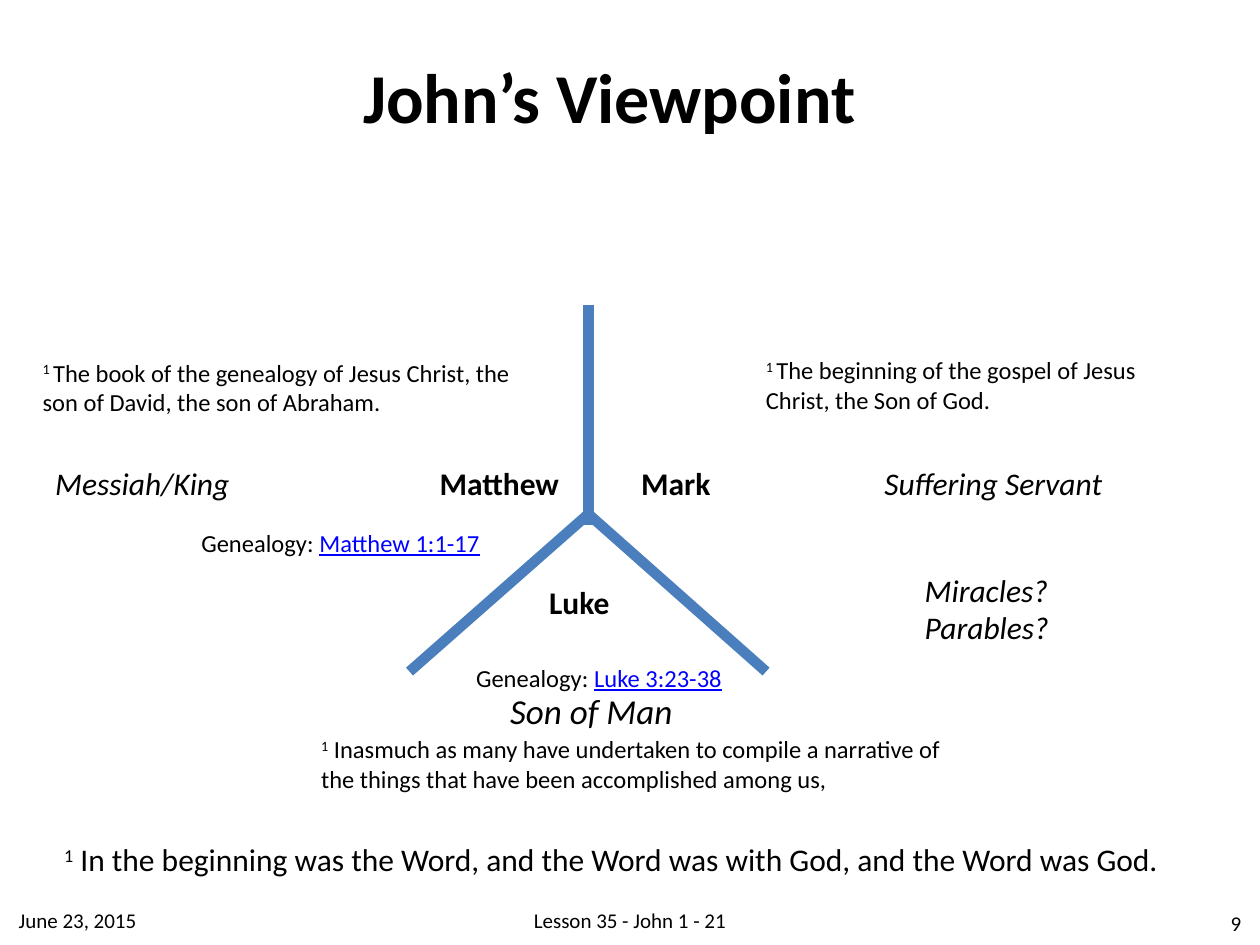
import pptx
import pptx.dml.color
import pptx.enum.shapes
import pptx.enum.text
import pptx.util
from lxml import etree

Inches = pptx.util.Inches
ALIGN = pptx.enum.text.PP_ALIGN
FONT = "Calibri"
BLACK, BLUE, LINK = "000000", "4B7EBC", "0000FF"

# Run styles: b bold, i italic, s superscript, u underlined reference
# Labels: left, top, width, height, size, style, lines (one line each)
LABELS = [
    (4.99, 3.63, 0.76, 0.4, 18, "b", ["Mark"]),
    (4.26, 4.58, 0.68, 0.4, 18, "b", ["Luke"]),
    (3.39, 3.63, 1.16, 0.4, 18, "b", ["Matthew"]),
    (6.92, 3.63, 1.96, 0.4, 18, "i", ["Suffering Servant"]),
    (3.95, 5.42, 1.51, 0.44, 20, "i", ["Son of Man"]),
    (0.34, 3.63, 1.6, 0.4, 18, "i", ["Messiah/King"]),
    (7.24, 4.48, 1.19, 0.71, 18, "i", ["Miracles?", "Parables?"]),
]

# Opening verses: left, top, width, height, size, wrap, number, words
VERSES = [
    (0.41, 6.62, 9.05, 0.4, 18, False, "1",
     " In the beginning was the Word, and the Word was with God, and the Word was God."),
    (0.24, 2.79, 4.08, 0.57, 14, True, "1 ",
     "The book of the genealogy of Jesus Christ, the son of David, the son of Abraham."),
    (5.98, 2.77, 3.22, 0.57, 14, True, "1 ",
     "The beginning of the gospel of Jesus Christ, the Son of God."),
    (2.45, 5.78, 5.22, 0.57, 14, True, "1",
     " Inasmuch as many have undertaken to compile a narrative of "
     "the things that have been accomplished among us,"),
]

# Genealogies: left, top, width, reference
LINES = [
    (3.68, 5.21, 2.25, "Luke 3:23-38"),
    (1.5, 4.14, 2.46, "Matthew 1:1-17"),
]

# Title and footer: left, top, width, height, size, style, align, words
FRAME = [
    (2.09, 0.37, 5.49, 0.77, 40, "b", ALIGN.CENTER, "John’s Viewpoint"),
    (0.05, 7.1, 2.03, 0.4, 12, "", ALIGN.LEFT, "June 23, 2015"),
    (1.71, 7.1, 6.58, 0.4, 12, "", ALIGN.CENTER, "Lesson 35 - John 1 - 21"),
    (9.2, 7.13, 0.75, 0.4, 12, "", ALIGN.RIGHT, "9"),
]

# Three spokes that part the gospels
SPOKES = [
    ((4.67, 2.42), (4.67, 4.17)),
    ((4.67, 4.08), (6.08, 5.33)),
    ((4.67, 4.08), (3.25, 5.33)),
]

deck = pptx.Presentation()
deck.slide_width, deck.slide_height = Inches(10), Inches(7.5)
slide = deck.slides.add_slide(deck.slide_layouts[6])


def color(code):
    return pptx.dml.color.RGBColor.from_string(code)


def add_text(place, size, lines, wrap=True, align=ALIGN.LEFT, middle=False):
    """Add a text box; each line is a list of (words, style) runs."""
    frame = slide.shapes.add_textbox(*map(Inches, place)).text_frame
    frame.word_wrap = wrap
    if middle:
        frame.vertical_anchor = pptx.enum.text.MSO_ANCHOR.MIDDLE
    for i, runs in enumerate(lines):
        para = frame.add_paragraph() if i else frame.paragraphs[0]
        para.alignment = align
        for words, style in runs:
            run = para.add_run()
            run.text = words
            font = run.font
            font.name, font.size = FONT, pptx.util.Pt(size)
            font.bold, font.italic = style == "b", style == "i"
            font.underline = style == "u"
            font.color.rgb = color(LINK if style == "u" else BLACK)
            if style == "s":
                run._r.get_or_add_rPr().set("baseline", "30000")


# Spokes
for start, end in SPOKES:
    spoke = slide.shapes.add_connector(
        pptx.enum.shapes.MSO_CONNECTOR.STRAIGHT, *map(Inches, start + end))
    spoke.line.color.rgb = color(BLUE)
    spoke.line.width = pptx.util.Pt(6)
    etree.SubElement(spoke._element.spPr, pptx.oxml.ns.qn("a:effectLst"))

# Names and roles
for *place, size, style, lines in LABELS:
    add_text(place, size, [[(words, style)] for words in lines], wrap=False)

# Verses
for *place, size, wrap, number, words in VERSES:
    add_text(place, size, [[(number, "s"), (words, "")]], wrap=wrap)

# Genealogies
for *place, verse in LINES:
    add_text(place + [0.34], 14, [[("Genealogy: ", ""), (verse, "u")]])

# Title and footer
for *place, size, style, align, words in FRAME:
    add_text(place, size, [[(words, style)]], align=align, middle=True)

deck.save("out.pptx")
